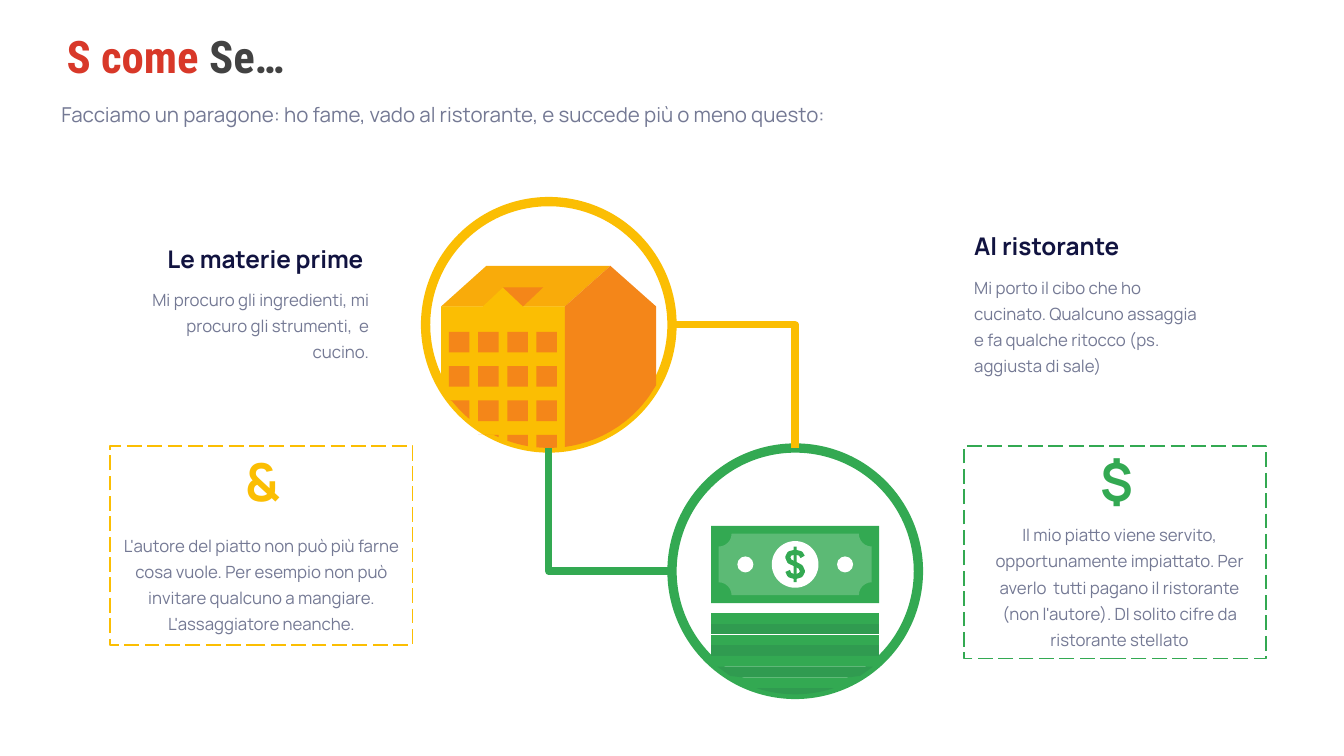
from math import sqrt

from lxml import etree
from pptx import Presentation
from pptx.dml.color import RGBColor
from pptx.enum.dml import MSO_LINE
from pptx.enum.shapes import MSO_CONNECTOR, MSO_SHAPE
from pptx.enum.text import MSO_ANCHOR, MSO_AUTO_SIZE, PP_ALIGN
from pptx.oxml.ns import qn
from pptx.util import Pt

LEFT, CENTER, RIGHT = PP_ALIGN.LEFT, PP_ALIGN.CENTER, PP_ALIGN.RIGHT
TOP, BOTTOM = MSO_ANCHOR.TOP, MSO_ANCHOR.BOTTOM
RECT, OVAL = MSO_SHAPE.RECTANGLE, MSO_SHAPE.OVAL

YELLOW, AMBER, ORANGE = "FBBE03", "F9AB0A", "F48619"
GREEN, DARK_GREEN, PALE_GREEN = "33A952", "309B50", "5CBA75"
WHITE, NAVY, GREY = "FFFFFF", "111340", "747994"
RED, CHARCOAL = "D83829", "424242"

RADIUS = 66
HOUSE = (294, 174)
MONEY = (426, 306)

prs = Presentation()
prs.slide_width, prs.slide_height = Pt(720), Pt(405)
s = prs.slides.add_slide(prs.slide_layouts[5])


def paint(sp, fill=None, line=None, width=1):
    sp.shadow.inherit = False
    if fill:
        sp.fill.solid()
        sp.fill.fore_color.rgb = RGBColor.from_string(fill)
    else:
        sp.fill.background()
    if line:
        sp.line.color.rgb = RGBColor.from_string(line)
        sp.line.width = Pt(width)
    else:
        sp.line.fill.background()


def add_pieces(fill, centre, parts):
    """Draw parts, each (top edge from left to right, bottom y), cut off by the circle."""
    cx, cy = centre
    fb = None
    for tops, bottom in parts:
        x0, x1 = tops[0][0], tops[-1][0]
        arc = [cy + sqrt(max(0, RADIUS**2 - (x - cx) ** 2)) for x in (x0, x1)]
        steps = 12 if min(arc) < bottom else 1
        pts = list(tops)
        for i in range(steps + 1):
            x = x1 + (x0 - x1) * i / steps
            y = cy + sqrt(max(0, RADIUS**2 - (x - cx) ** 2))
            pts.append((x, max(tops[0][1], min(bottom, y))))
        pts = [(Pt(x), Pt(y)) for x, y in pts]
        if fb is None:
            fb = s.shapes.build_freeform(*pts[0])
        else:
            fb.move_to(*pts[0])
        fb.add_line_segments(pts[1:], close=True)
    paint(fb.convert_to_shape(), fill)


# Title
title = s.shapes.title
title.left, title.top, title.width, title.height = Pt(28.5), Pt(12), Pt(321), Pt(36)
tf = title.text_frame
tf.vertical_anchor = BOTTOM
p = tf.paragraphs[0]
p.alignment = LEFT
for text, color in (("S come", RED), (" Se…", CHARCOAL)):
    r = p.add_run()
    r.text = text
    r.font.name, r.font.size, r.font.bold = "Roboto Condensed", Pt(24), True
    r.font.color.rgb = RGBColor.from_string(color)

# Rings
for (cx, cy), color in ((HOUSE, YELLOW), (MONEY, GREEN)):
    ring = s.shapes.add_shape(OVAL, Pt(cx - RADIUS), Pt(cy - RADIUS),
                              Pt(2 * RADIUS), Pt(2 * RADIUS))
    paint(ring, line=color, width=5)

# House: roof, front with gable, side, awning, windows
EAVES, RIDGE, FLOOR = 164.2, 142.4, 240
add_pieces(AMBER, HOUSE, [
    ([(236.3, EAVES), (260.6, RIDGE), (327, RIDGE), (302.6, EAVES)], EAVES)])
add_pieces(YELLOW, HOUSE, [
    ([(236.3, EAVES), (258.7, EAVES), (269.5, 154), (280.2, EAVES), (302.6, EAVES)], FLOOR)])
add_pieces(ORANGE, HOUSE, [([(302.6, EAVES), (327, RIDGE), (351.5, EAVES)], FLOOR)])
awning = s.shapes.add_shape(MSO_SHAPE.FLOWCHART_MERGE, Pt(269.5), Pt(154), Pt(21.5), Pt(10.2))
paint(awning, ORANGE)
windows = []
for row in range(4):
    for col in range(4):
        if (row, col) != (3, 0):  # this one lies outside the ring
            x, y = 240.5 + 15.65 * col, 177.8 + 18.4 * row
            windows.append(([(x, y), (x + 11, y)], y + 11))
add_pieces(ORANGE, HOUSE, windows)

# Banknote
for kind, cx, cy, w, h, color in (
    (RECT, 426, 302.4, 90, 41.4, GREEN),
    (MSO_SHAPE.PLAQUE, 426, 302.4, 82, 33, PALE_GREEN),
    (OVAL, 426, 302.4, 25, 25, WHITE),
    (OVAL, 399.3, 302.4, 8.6, 8.6, WHITE),
    (OVAL, 452.7, 302.4, 8.6, 8.6, WHITE),
    (RECT, 426, 302.4, 1.7, 19, GREEN),
):
    sp = s.shapes.add_shape(kind, Pt(cx - w / 2), Pt(cy - h / 2), Pt(w), Pt(h))
    if kind == MSO_SHAPE.PLAQUE:
        sp.adjustments[0] = 0.21
    paint(sp, color)
curve = [(4, -4), (3, -5.8), (0, -6.6), (-3, -5.8), (-4, -3.8), (-3, -1.6), (0, -0.2),
         (3, 1.4), (4, 3.7), (3, 5.7), (0, 6.6), (-3, 5.7), (-4, 3.5)]
curve = [(Pt(426 + x), Pt(302.4 + y)) for x, y in curve]
fb = s.shapes.build_freeform(*curve[0])
fb.add_line_segments(curve[1:], close=False)
paint(fb.convert_to_shape(), line=GREEN, width=2.6)

# Stack of notes
BAND = 5.76
for i in range(8):
    y = 328.4 + BAND * i
    half = min(45, sqrt(RADIUS**2 - (y - MONEY[1]) ** 2))
    add_pieces(DARK_GREEN if i % 2 else GREEN, MONEY,
               [([(426 - half, y), (426 + half, y)], y + BAND)])

# Dashed boxes
for x, h, color in ((59, 106.5, YELLOW), (516.3, 113.8, GREEN)):
    sp = s.shapes.add_shape(RECT, Pt(x), Pt(239), Pt(162), Pt(h))
    paint(sp, line=color)
    sp.line.dash_style = MSO_LINE.LONG_DASH

# Elbows between the rings
for x0, y0, x1, y1, color in (
    (HOUSE[0] + RADIUS, HOUSE[1], MONEY[0], MONEY[1] - RADIUS, YELLOW),
    (MONEY[0] - RADIUS, MONEY[1], HOUSE[0], HOUSE[1] + RADIUS, GREEN),
):
    cn = s.shapes.add_connector(MSO_CONNECTOR.ELBOW, Pt(x0), Pt(y0), Pt(x1), Pt(y1))
    cn.line.color.rgb = RGBColor.from_string(color)
    cn.line.width = Pt(4)
    spPr = cn._element.spPr
    spPr.find(qn("a:prstGeom")).set("prst", "bentConnector2")
    etree.SubElement(spPr, qn("a:effectLst"))

# Texts: left, top, width, height, align, anchor, size, bold, colour, text
for x, y, w, h, align, anchor, size, bold, color, text in (
    (68.4, 129, 129, 18.7, RIGHT, BOTTOM, 13, True, NAVY, "Le materie prime"),
    (68.4, 150.5, 132, 42, RIGHT, TOP, 9, False, GREY,
     "Mi procuro gli ingredienti, mi procuro gli strumenti,  e cucino."),
    (59, 282.2, 162, 56, CENTER, TOP, 9, False, GREY,
     "L'autore del piatto non può più farne cosa vuole. Per esempio non può "
     "invitare qualcuno a mangiare. L'assaggiatore neanche."),
    (68.4, 239, 145, 36.7, CENTER, BOTTOM, 28, True, YELLOW, "&"),
    (519, 122.4, 132, 18.7, LEFT, BOTTOM, 13, True, NAVY, "Al ristorante"),
    (519, 144, 132, 70.5, LEFT, TOP, 9, False, GREY,
     "Mi porto il cibo che ho cucinato. Qualcuno assaggia e fa qualche ritocco "
     "(ps. aggiusta di sale)"),
    (522.7, 276.5, 154, 70.5, CENTER, TOP, 9, False, GREY,
     "Il mio piatto viene servito, opportunamente impiattato. Per averlo  tutti "
     "pagano il ristorante (non l'autore). DI solito cifre da ristorante stellato"),
    (525.6, 239, 145, 36.7, CENTER, BOTTOM, 28, True, GREEN, "$"),
    (30, 53.3, 631, 16, LEFT, TOP, 11, False, GREY,
     "Facciamo un paragone: ho fame, vado al ristorante, e succede più o meno questo:"),
):
    tf = s.shapes.add_textbox(Pt(x), Pt(y), Pt(w), Pt(h)).text_frame
    tf.word_wrap = True
    tf.auto_size = MSO_AUTO_SIZE.SHAPE_TO_FIT_TEXT
    tf.vertical_anchor = anchor
    tf.margin_left = tf.margin_right = Pt(2.9)
    tf.margin_top = tf.margin_bottom = Pt(1.4)
    p = tf.paragraphs[0]
    p.alignment = align
    if size == 9:
        p.line_spacing = 1.3
    r = p.add_run()
    r.text = text
    r.font.name, r.font.size, r.font.bold = "Manrope", Pt(size), bold
    r.font.color.rgb = RGBColor.from_string(color)

prs.save("out.pptx")
